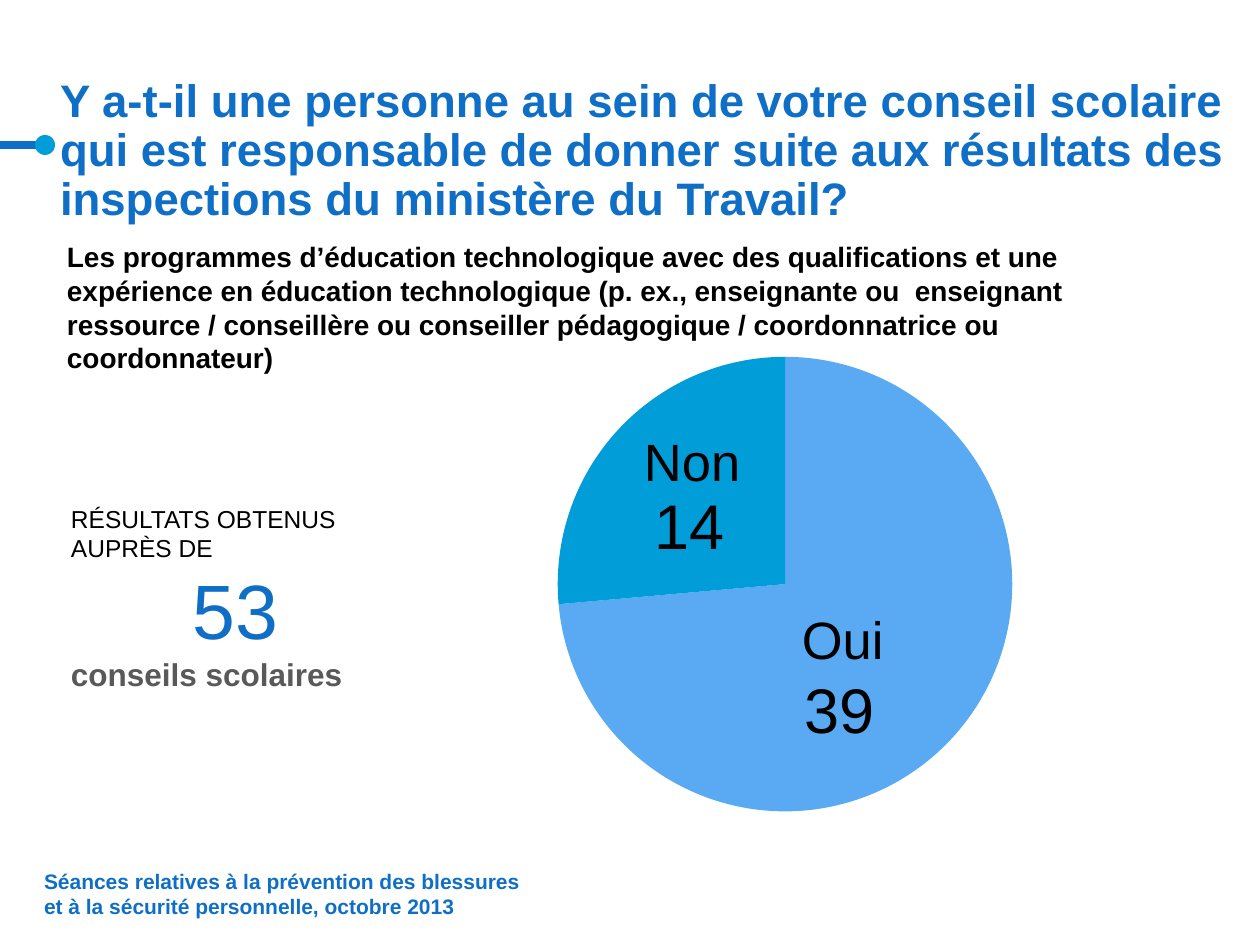
"""Build the slide on who follows up ministry inspections, with a pie of answers."""
from lxml import etree
from pptx import Presentation
from pptx.chart.data import CategoryChartData
from pptx.dml.color import RGBColor
from pptx.enum.chart import XL_CHART_TYPE, XL_LABEL_POSITION
from pptx.enum.shapes import MSO_CONNECTOR, MSO_SHAPE
from pptx.enum.text import MSO_ANCHOR, PP_ALIGN
from pptx.oxml.ns import qn
from pptx.util import Emu, Pt

PIE, CENTER_LABEL = XL_CHART_TYPE.PIE, XL_LABEL_POSITION.CENTER
STRAIGHT, OVAL = MSO_CONNECTOR.STRAIGHT, MSO_SHAPE.OVAL
TOP, BOTTOM = MSO_ANCHOR.TOP, MSO_ANCHOR.BOTTOM
LEFT, CENTER = PP_ALIGN.LEFT, PP_ALIGN.CENTER

PX = 914400 // 126
FONT = "Arial"
BLUE, CYAN, SKY, BLACK, GREY = "0F6FC6", "009DD9", "59AAF2", "000000", "595959"
PAD, TITLE_PAD, NO_PAD = (13, 6, 13, 6), (0, 6, 0, 0), (0, 0, 0, 0)

# box, insets, anchor, line spacing, paragraphs (text, size, colour, bold, alignment)
TEXTS = [
    ((54, 234, 1150, 149), PAD, TOP, None, [
        ("Les programmes d’éducation technologique avec des qualifications et une "
         "expérience en éducation technologique (p. ex., enseignante ou  enseignant "
         "ressource / conseillère ou conseiller pédagogique / coordonnatrice ou "
         "coordonnateur)", 16, BLACK, True, LEFT)]),
    ((60, 66, 1194, 159), TITLE_PAD, BOTTOM, 28, [
        ("Y a-t-il une personne au sein de votre conseil scolaire qui est responsable "
         "de donner suite aux résultats des inspections du ministère du Travail?",
         26, BLUE, True, LEFT)]),
    ((789, 601, 129, 77), PAD, TOP, None, [("Oui", 30, BLACK, False, LEFT)]),
    ((631, 423, 139, 77), PAD, TOP, None, [("Non", 30, BLACK, False, LEFT)]),
    ((58, 498, 377, 204), PAD, TOP, None, [
        ("RÉSULTATS OBTENUS AUPRÈS DE", 14, BLACK, False, LEFT),
        ("53 ", 44, BLUE, False, CENTER),
        ("conseils scolaires", 18, GREY, True, LEFT)]),
    ((44, 886, 498, 33), NO_PAD, BOTTOM, None, [
        ("Séances relatives à la prévention des blessures et à la sécurité "
         "personnelle, octobre 2013", 12, BLUE, True, LEFT)]),
]

CHART_BOX = (359, 304, 853, 561)
PIE_BOX = (558, 357, 455, 455)
# category, value, colour, label shift
SLICES = [("1", 39, SKY, (-29, 51)), ("2", 14, CYAN, (-12, 21))]


def px(*lengths):
    return [Emu(n * PX) for n in lengths]


def rgb(color):
    return RGBColor.from_string(color)


def set_font(font, size, color, bold=False):
    font.name, font.size, font.bold = FONT, Pt(size), bold
    font.color.rgb = rgb(color)


def manual_layout(**values):
    layout = etree.Element(qn("c:layout"))
    manual = etree.SubElement(layout, qn("c:manualLayout"))
    for tag, value in values.items():
        etree.SubElement(manual, qn("c:" + tag)).set("val", str(value))
    return layout


def add_text(slide, box, insets, anchor, spacing, paragraphs):
    tf = slide.shapes.add_textbox(*px(*box)).text_frame
    tf.word_wrap, tf.vertical_anchor = True, anchor
    tf.margin_left, tf.margin_top, tf.margin_right, tf.margin_bottom = px(*insets)
    for i, (text, size, color, bold, align) in enumerate(paragraphs):
        p = tf.add_paragraph() if i else tf.paragraphs[0]
        p.text, p.alignment = text, align
        if spacing:
            p.line_spacing = Pt(spacing)
        set_font(p.runs[0].font, size, color, bold)


def add_pie(slide):
    data = CategoryChartData()
    data.categories = [name for name, *_ in SLICES]
    data.add_series("Series 1", [value for _, value, *_ in SLICES])
    chart = slide.shapes.add_chart(PIE, *px(*CHART_BOX), data).chart
    chart.has_legend = chart.has_title = False
    set_font(chart.font, 18, BLACK)
    plot = chart.plots[0]
    plot.vary_by_categories = False
    left, top, width, height = CHART_BOX
    x, y, w, h = PIE_BOX
    area = chart._chartSpace.chart.plotArea
    for old in area.findall(qn("c:layout")):
        area.remove(old)
    area.insert(0, manual_layout(
        layoutTarget="inner", xMode="edge", yMode="edge",
        x=round((x - left) / width, 3), y=round((y - top) / height, 3),
        w=round(w / width, 3), h=round(h / height, 3)))
    series = plot.series[0]
    for i, (_, _, color, (dx, dy)) in enumerate(SLICES):
        point = series.points[i]
        point.format.fill.solid()
        point.format.fill.fore_color.rgb = rgb(color)
        point.format.line.fill.background()
        label = point.data_label
        set_font(label.font, 36, BLACK)
        label.position = CENTER_LABEL
    for dlbl, (*_, (dx, dy)) in zip(series._element.iter(qn("c:dLbl")), SLICES):
        dlbl.insert(1, manual_layout(x=round(dx / width, 3), y=round(dy / height, 3)))


def main():
    prs = Presentation()
    prs.slide_width, prs.slide_height = px(1260, 945)
    s = prs.slides.add_slide(prs.slide_layouts[6])
    line = s.shapes.add_connector(STRAIGHT, *px(0, 145, 44, 145))
    line.line.color.rgb, line.line.width = rgb(BLUE), Pt(4.75)
    etree.SubElement(line._element.spPr, qn("a:effectLst"))
    add_pie(s)
    for text in TEXTS:
        add_text(s, *text)
    dot = s.shapes.add_shape(OVAL, *px(35, 135, 20, 20))
    dot.shadow.inherit = False
    dot.fill.solid()
    dot.fill.fore_color.rgb = rgb(CYAN)
    dot.line.fill.background()
    prs.save("out.pptx")


if __name__ == "__main__":
    main()
